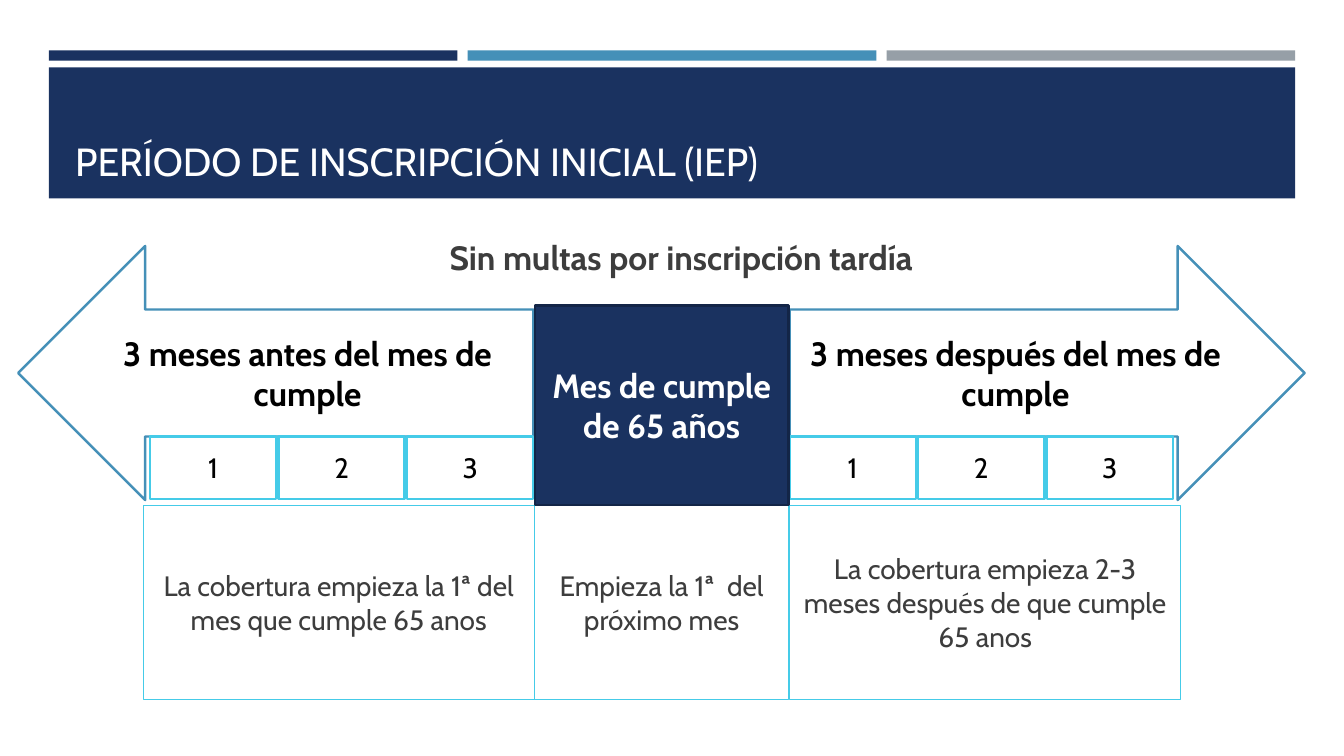
from pptx import Presentation
from pptx import util as u
from pptx.dml import color
from pptx.enum import shapes, text

NAVY, BLUE, CYAN, GRAY = "1A3260", "4590B8", "45CBE8", "969FA7"
WHITE, BLACK, DARK, EDGE = "FFFFFF", "000000", "3D3D3D", "132547"
KIND = shapes.MSO_SHAPE


def tint(code):
    return color.RGBColor.from_string(code)


def write(item, words, size, code, bold=False, align=text.PP_ALIGN.CENTER,
          anchor=text.MSO_ANCHOR.MIDDLE):
    frame = item.text_frame
    frame.text = words
    frame.word_wrap = True
    frame.auto_size = text.MSO_AUTO_SIZE.NONE
    frame.vertical_anchor = anchor
    para = frame.paragraphs[0]
    para.alignment = align
    font = para.runs[0].font
    font.name = "Cabin"
    font.size = u.Pt(size)
    font.bold = bold
    font.color.rgb = tint(code)


def draw(slide, box, fill=None, line=None, width=1.75, kind=KIND.RECTANGLE):
    item = slide.shapes.add_shape(kind, *map(u.Cm, box))
    item.shadow.inherit = False
    if fill:
        item.fill.solid()
        item.fill.fore_color.rgb = tint(fill)
    else:
        item.fill.background()
    if line:
        item.line.color.rgb = tint(line)
        item.line.width = u.Pt(width)
    else:
        item.line.fill.background()
    return item


def header(slide, x, y, w):
    gap = 0.26
    bar = (w - 2 * gap) / 3
    for i, code in enumerate((NAVY, BLUE, GRAY)):
        draw(slide, (x + i * (bar + gap), y, bar, 0.26), code)
    draw(slide, (x, y + 0.43, w, 3.3), NAVY)
    title = slide.shapes.title
    title.left, title.top = u.Cm(x + 0.41), u.Cm(y + 0.69)
    title.width, title.height = u.Cm(w - 0.79), u.Cm(2.82)
    write(title, "PERÍODO DE INSCRIPCIÓN INICIAL (IEP)", 28, WHITE,
          align=text.PP_ALIGN.LEFT, anchor=text.MSO_ANCHOR.BOTTOM)
    title.element.getparent().append(title.element)


def note(slide, box, words):
    write(draw(slide, box, line=CYAN, width=0.75), words, 20, DARK)


def side(slide, x, y, kind, inset, label, words):
    arrow = draw(slide, (x, y, 12.98, 6.4), WHITE, BLUE, kind=kind)
    write(arrow, label, 24, BLACK, bold=True)
    start = x + inset
    for i in range(3):
        cell = draw(slide, (start + 0.17 * (inset > 0) + i * 3.24, y + 4.8, 3.18, 1.57),
                    WHITE, CYAN)
        write(cell, str(i + 1), 20, BLACK)
    note(slide, (start, y + 6.53, 9.86, 4.9), words)


def middle(slide, x, y, w):
    note(slide, (x, y + 5.03, w, 4.9), "Empieza la 1ª  del próximo mes")
    month = draw(slide, (x, y, w, 5.03), NAVY, EDGE)
    write(month, "Mes de cumple de 65 años", 24, WHITE, bold=True)


def main():
    deck = Presentation()
    deck.slide_width, deck.slide_height = u.Cm(33.87), u.Cm(19.05)
    slide = deck.slides.add_slide(deck.slide_layouts[5])
    header(slide, 1.23, 1.27, 31.41)
    banner = draw(slide, (5.38, 5.84, 23.57, 1.27), WHITE)
    write(banner, "Sin multas por inscripción tardía", 24, DARK, bold=True)
    side(slide, 19.9, 6.2, KIND.RIGHT_ARROW, 0,
         "3 meses después del mes de cumple",
         "La cobertura empieza 2-3 meses después de que cumple 65 anos")
    side(slide, 0.46, 6.2, KIND.LEFT_ARROW, 3.15,
         "3 meses antes del mes de cumple",
         "La cobertura empieza la 1ª del mes que cumple 65 anos")
    middle(slide, 13.48, 7.7, 6.39)
    deck.save("out.pptx")


if __name__ == "__main__":
    main()
